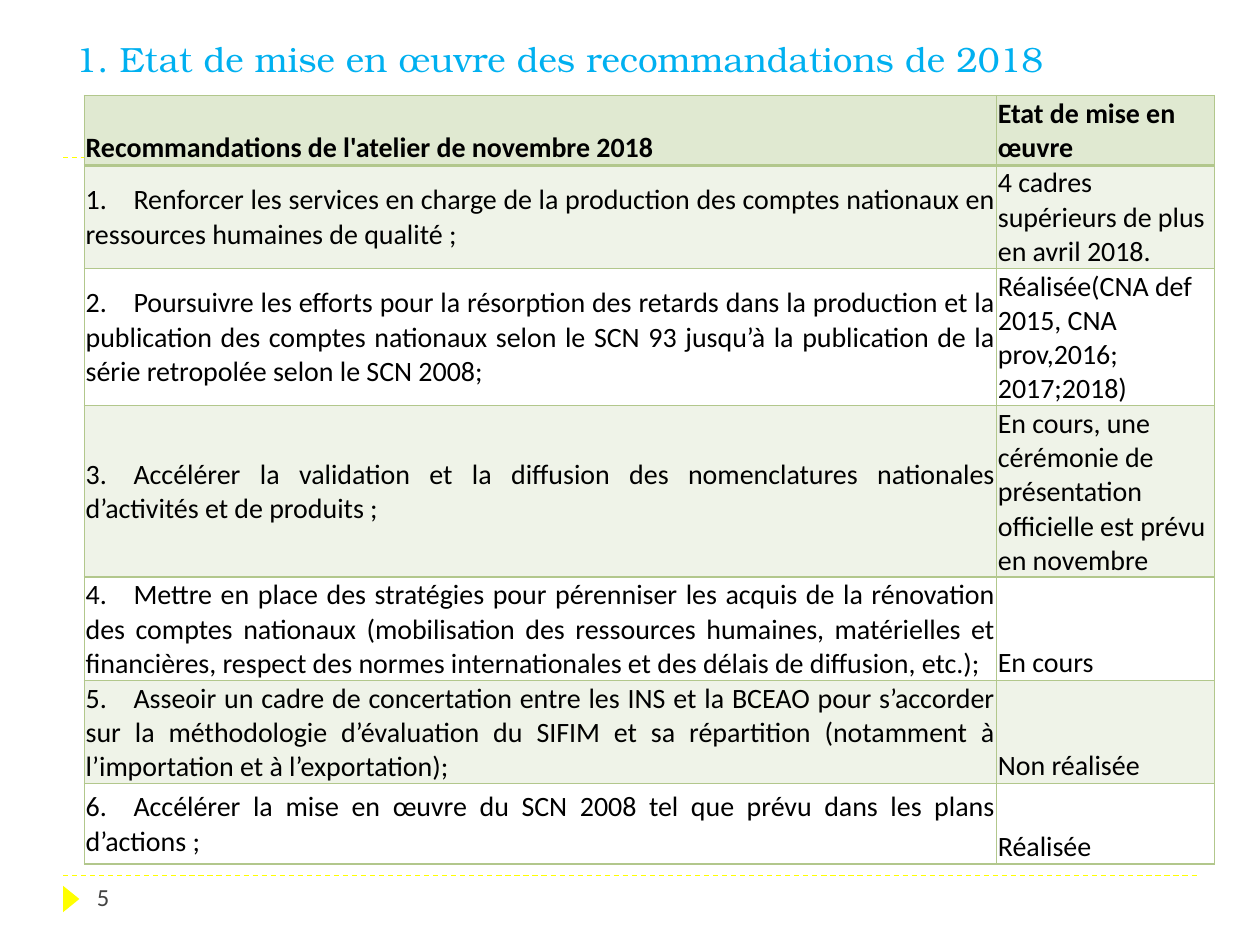
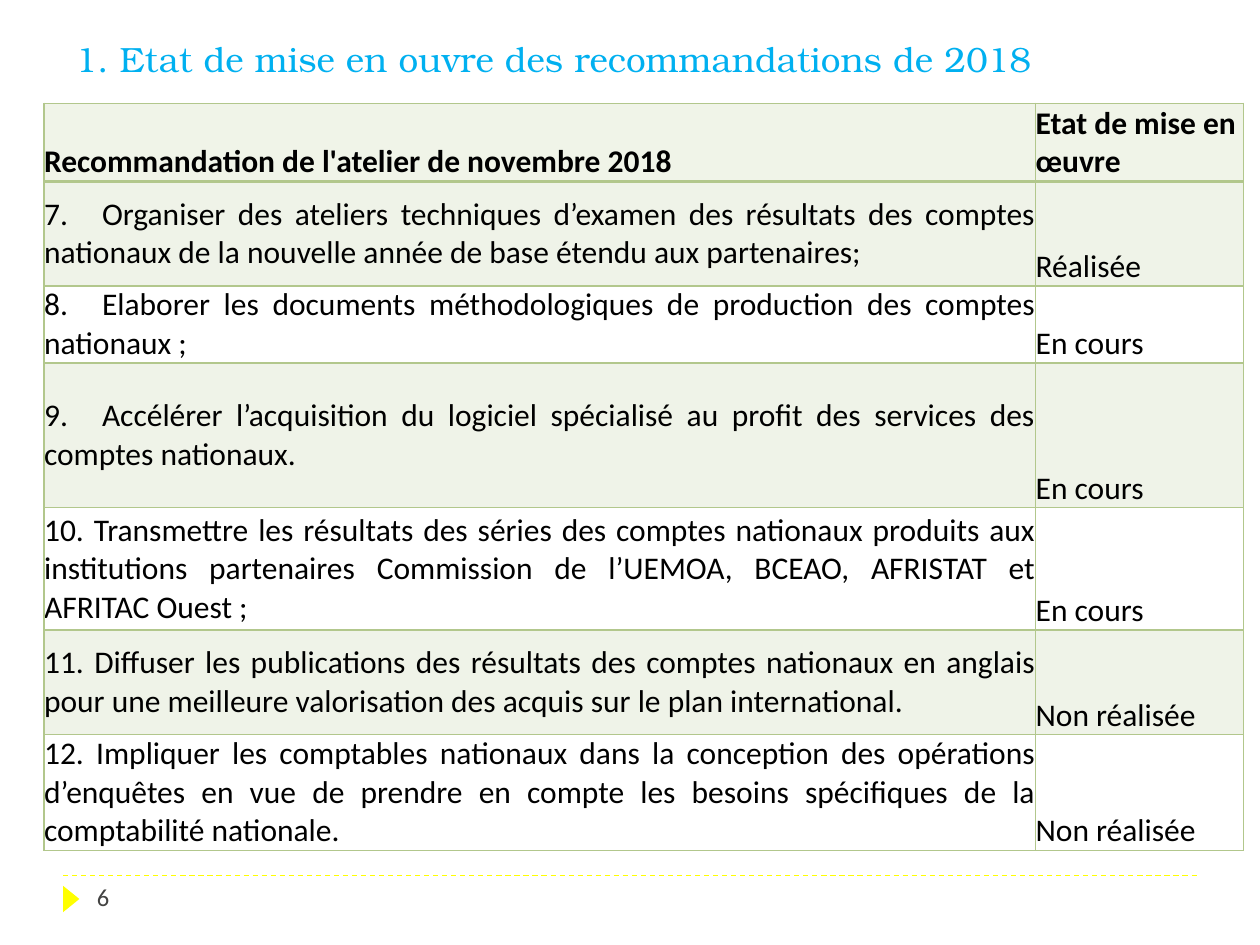
from dataclasses import dataclass

from lxml import etree
from pptx import Presentation
from pptx import util as u
from pptx.dml.color import RGBColor
from pptx.enum import dml, shapes, text
from pptx.oxml import ns


@dataclass(frozen=True)
class Theme:
    title_color: str = "00B0F0"
    accent: str = "FFFF00"
    number_color: str = "434342"
    ink: str = "000000"
    green: str = "B2C78C"
    band_alpha: int = 20
    title_font: str = "TeX Gyre Bonum"
    body_font: str = "Calibri"
    title_size: int = 20
    number_size: int = 14
    rule_width: float = 0.75
    border_width: int = 1
    header_rule_width: int = 2


@dataclass(frozen=True)
class TableLook:
    left: float
    top: float
    columns: tuple
    heights: tuple
    size: int
    header_fill: str
    inset: float
    number_tab: float


class Deck:
    """Holds the style and the current slide."""

    def __init__(self, theme):
        self.theme = theme
        self.presentation = Presentation()
        self.presentation.slide_width = u.Inches(10)
        self.presentation.slide_height = u.Inches(7.5)
        self.slide = None

    def add_run(self, paragraph, content, font, size, color, bold=False):
        run = paragraph.add_run()
        run.text = content
        run.font.name = font
        run.font.size = u.Pt(size)
        run.font.bold = bold
        run.font.color.rgb = RGBColor.from_string(color)

    def add_slide(self, title, number):
        layout = self.presentation.slide_layouts.get_by_name("Title Only")
        self.slide = self.presentation.slides.add_slide(layout)
        for y in (6.95, 1.25):
            self.add_dashed_rule(y)
        self.add_page_marker()
        self.add_title(title)
        self.add_page_number(number)

    def add_dashed_rule(self, y):
        rule = self.slide.shapes.add_connector(
            shapes.MSO_CONNECTOR.STRAIGHT,
            u.Inches(0.5), u.Inches(y), u.Inches(9.5), u.Inches(y))
        rule.line.color.rgb = RGBColor.from_string(self.theme.accent)
        rule.line.width = u.Pt(self.theme.rule_width)
        rule.line.dash_style = dml.MSO_LINE.DASH
        properties = rule._element.find(ns.qn("p:spPr"))
        etree.SubElement(properties, ns.qn("a:effectLst"))

    def add_page_marker(self):
        marker = self.slide.shapes.add_shape(
            shapes.MSO_SHAPE.ISOSCELES_TRIANGLE,
            u.Inches(0.46), u.Inches(7.07), u.Inches(0.21), u.Inches(0.13))
        marker.rotation = 90
        marker.shadow.inherit = False
        marker.fill.solid()
        marker.fill.fore_color.rgb = RGBColor.from_string(self.theme.accent)
        marker.line.fill.background()

    def add_title(self, content):
        title = self.slide.shapes.title
        title.left, title.top = u.Inches(0.5), u.Inches(0.17)
        title.width, title.height = u.Inches(9), u.Inches(0.59)
        frame = title.text_frame
        frame.auto_size = text.MSO_AUTO_SIZE.NONE
        frame.vertical_anchor = text.MSO_ANCHOR.MIDDLE
        paragraph = frame.paragraphs[0]
        paragraph.alignment = text.PP_ALIGN.LEFT
        self.add_run(paragraph, content, self.theme.title_font,
                     self.theme.title_size, self.theme.title_color)

    def add_page_number(self, number):
        box = self.slide.shapes.add_textbox(
            u.Inches(0.67), u.Inches(6.95), u.Inches(2.17), u.Inches(0.4))
        box.text_frame.word_wrap = True
        self.add_run(box.text_frame.paragraphs[0], str(number),
                     self.theme.body_font, self.theme.number_size,
                     self.theme.number_color)

    def add_table(self, look, headers, first_number, recommendations):
        row_count = len(recommendations) + 1
        table = self.slide.shapes.add_table(
            row_count, len(headers), u.Inches(look.left), u.Inches(look.top),
            u.Inches(sum(look.columns)), u.Inches(sum(look.heights))).table
        table.first_row = table.horz_banding = False
        for column, width in zip(table.columns, look.columns):
            column.width = u.Inches(width)
        for row, height in zip(table.rows, look.heights):
            row.height = u.Inches(height)

        # Header row
        for column, header in enumerate(headers):
            self.fill_cell(table.cell(0, column), look, header, 0)

        # Numbered recommendations and their status
        for row, (action, status) in enumerate(recommendations, 1):
            number = first_number + row - 1
            gap = "\t" if number < 10 else " "
            action_cell = table.cell(row, 0)
            self.fill_cell(action_cell, look, f"{number}.{gap}{action}", row)
            action_cell.vertical_anchor = text.MSO_ANCHOR.MIDDLE
            paragraph = action_cell.text_frame.paragraphs[0]
            paragraph.alignment = text.PP_ALIGN.JUSTIFY
            self.set_tab(paragraph, look.number_tab)
            self.fill_cell(table.cell(row, 1), look, status, row)

    def fill_cell(self, cell, look, content, row):
        theme = self.theme
        is_header = row == 0
        cell.margin_left = cell.margin_right = u.Inches(look.inset)
        cell.margin_top, cell.margin_bottom = u.Inches(look.inset), 0
        cell.vertical_anchor = text.MSO_ANCHOR.BOTTOM
        self.add_run(cell.text_frame.paragraphs[0], content, theme.body_font,
                     look.size, theme.ink, is_header)
        if is_header or row % 2:
            color = look.header_fill if is_header else theme.green
            cell.fill.solid()
            cell.fill.fore_color.rgb = RGBColor.from_string(color)
        else:
            cell.fill.background()
        properties = cell._tc.get_or_add_tcPr()
        if row % 2:
            color_node = properties.find(".//" + ns.qn("a:srgbClr"))
            etree.SubElement(color_node, ns.qn("a:alpha"),
                             val=str(theme.band_alpha * 1000))
        self.set_borders(properties, row)

    def set_borders(self, properties, row):
        theme = self.theme
        thick_side = {0: "lnB", 1: "lnT"}.get(row)
        for index, side in enumerate(("lnL", "lnR", "lnT", "lnB")):
            width = theme.header_rule_width if side == thick_side else theme.border_width
            line = etree.Element(ns.qn("a:" + side), w=str(u.Pt(width)))
            fill = etree.SubElement(line, ns.qn("a:solidFill"))
            etree.SubElement(fill, ns.qn("a:srgbClr"), val=theme.green)
            properties.insert(index, line)

    def set_tab(self, paragraph, position):
        properties = paragraph._p.get_or_add_pPr()
        tabs = etree.SubElement(properties, ns.qn("a:tabLst"))
        etree.SubElement(tabs, ns.qn("a:tab"),
                         pos=str(u.Inches(position)), algn="l")


STATUS_HEADER = "Etat de mise en œuvre"

FIRST_RECOMMENDATIONS = [
    ("Renforcer les services en charge de la production des comptes nationaux "
     "en ressources humaines de qualité ;",
     "4 cadres supérieurs de plus en avril 2018."),
    ("Poursuivre les efforts pour la résorption des retards dans la production "
     "et la publication des comptes nationaux selon le SCN 93 jusqu’à la "
     "publication de la série retropolée selon le SCN 2008;",
     "Réalisée(CNA def 2015, CNA prov,2016; 2017;2018)"),
    ("Accélérer la validation et la diffusion des nomenclatures nationales "
     "d’activités et de produits ;",
     "En cours, une cérémonie de présentation officielle est prévu en novembre"),
    ("Mettre en place des stratégies pour pérenniser les acquis de la "
     "rénovation des comptes nationaux (mobilisation des ressources humaines, "
     "matérielles et financières, respect des normes internationales et des "
     "délais de diffusion, etc.);",
     "En cours"),
    ("Asseoir un cadre de concertation entre les INS et la BCEAO pour "
     "s’accorder sur la méthodologie d’évaluation du SIFIM et sa répartition "
     "(notamment à l’importation et à l’exportation);",
     "Non réalisée"),
    ("Accélérer la mise en œuvre du SCN 2008 tel que prévu dans les plans "
     "d’actions ;",
     "Réalisée"),
]

LAST_RECOMMENDATIONS = [
    ("Organiser des ateliers techniques d’examen des résultats des comptes "
     "nationaux de la nouvelle année de base étendu aux partenaires;",
     "Réalisée"),
    ("Elaborer les documents méthodologiques de production des comptes "
     "nationaux ;",
     "En cours"),
    ("Accélérer l’acquisition du logiciel spécialisé au profit des services des "
     "comptes nationaux.",
     "En cours"),
    ("Transmettre les résultats des séries des comptes nationaux produits aux "
     "institutions partenaires Commission de l’UEMOA, BCEAO, AFRISTAT et "
     "AFRITAC Ouest ;",
     "En cours"),
    ("Diffuser les publications des résultats des comptes nationaux en anglais "
     "pour une meilleure valorisation des acquis sur le plan international.",
     "Non réalisée"),
    ("Impliquer les comptables nationaux dans la conception des opérations "
     "d’enquêtes en vue de prendre en compte les besoins spécifiques de la "
     "comptabilité nationale.",
     "Non réalisée"),
]


def main():
    deck = Deck(Theme())

    # Recommendations 1 to 6
    deck.add_slide("1. Etat de mise en œuvre des recommandations de 2018", 5)
    look = TableLook(
        left=0.67, top=0.76, columns=(7.24, 1.73),
        heights=(0.55, 0.82, 1.09, 1.36, 0.82, 0.82, 0.64),
        size=16, header_fill="E0E9D1", inset=0.01, number_tab=0.38)
    deck.add_table(
        look, ("Recommandations de l'atelier de novembre 2018", STATUS_HEADER),
        1, FIRST_RECOMMENDATIONS)

    # Recommendations 7 to 12
    deck.add_slide("1. Etat de mise en ouvre des recommandations de 2018", 6)
    look = TableLook(
        left=0.35, top=0.82, columns=(7.87, 1.65),
        heights=(0.62, 0.83, 0.61, 1.15, 0.97, 0.83, 0.92),
        size=18, header_fill="F0F4E8", inset=0, number_tab=0.46)
    deck.add_table(
        look, ("Recommandation de l'atelier de novembre 2018", STATUS_HEADER),
        7, LAST_RECOMMENDATIONS)

    deck.presentation.save("out.pptx")


if __name__ == "__main__":
    main()
